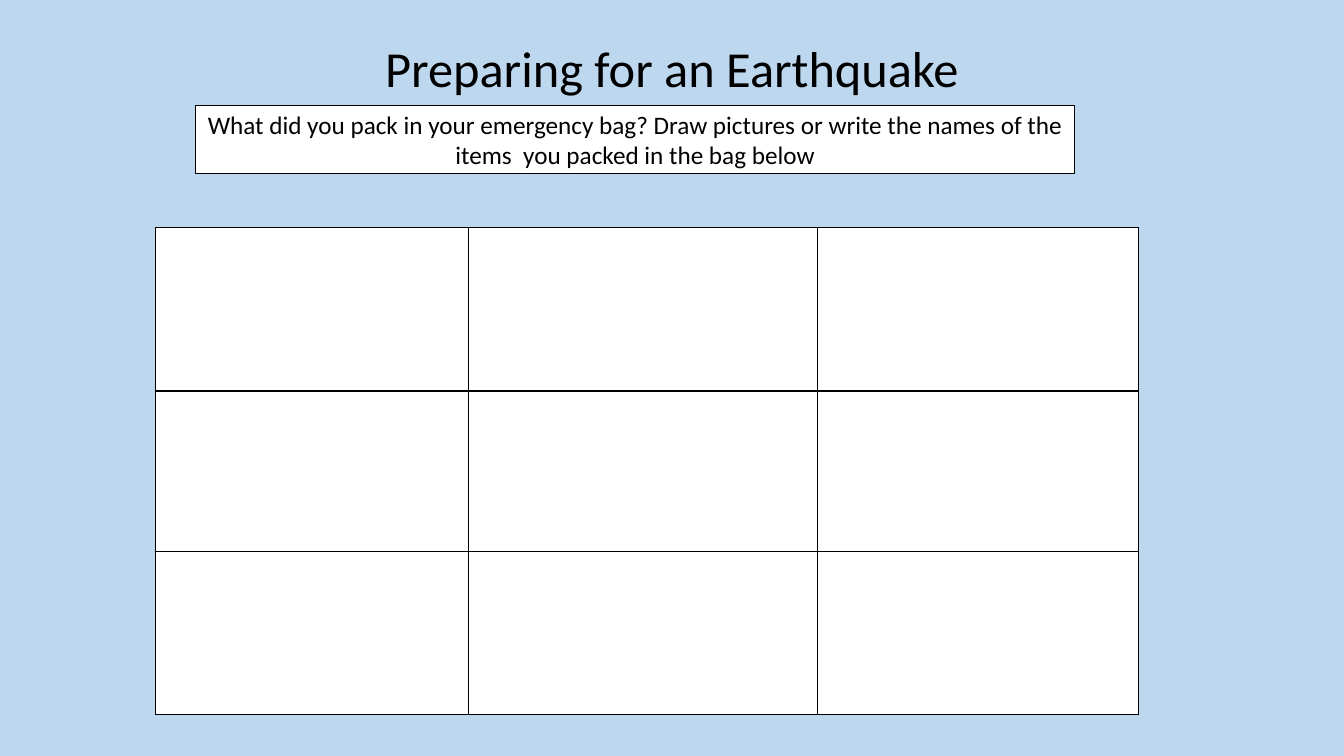
from lxml import etree
from pptx import Presentation
from pptx.dml.color import RGBColor
from pptx.enum.shapes import MSO_SHAPE
from pptx.enum.text import MSO_ANCHOR, PP_ALIGN
from pptx.oxml.ns import qn
from pptx.util import Inches, Pt

CENTER = PP_ALIGN.CENTER
MIDDLE = MSO_ANCHOR.MIDDLE
RECTANGLE = MSO_SHAPE.RECTANGLE
TITLE_ONLY = 5


def color(hex_value):
    return RGBColor.from_string(hex_value)


class Worksheet:
    """One slide together with the style shared by its elements."""
    font = "Calibri"
    ink = "000000"
    paper = "FFFFFF"
    backdrop = "BDD7EE"
    line_width = Pt(1)

    def __init__(self, deck):
        self.slide = deck.slides.add_slide(deck.slide_layouts[TITLE_ONLY])
        self.fill(self.slide.background, self.backdrop)

    def fill(self, element, hex_value):
        element.fill.solid()
        element.fill.fore_color.rgb = color(hex_value)

    def add_text(self, frame, text, size, line_spacing=None):
        frame.word_wrap = True
        frame.vertical_anchor = MIDDLE
        paragraph = frame.paragraphs[0]
        paragraph.alignment = CENTER
        paragraph.line_spacing = line_spacing
        run = paragraph.add_run()
        run.text = text
        run.font.name = self.font
        run.font.size = Pt(size)
        run.font.color.rgb = color(self.ink)

    def title(self, text, left, top, width, height):
        heading = self.slide.shapes.title
        heading.left, heading.top = Inches(left), Inches(top)
        heading.width, heading.height = Inches(width), Inches(height)
        self.add_text(heading.text_frame, text, 36, line_spacing=0.9)

    def instruction(self, text, left, top, width, height):
        box = self.slide.shapes.add_shape(
            RECTANGLE, Inches(left), Inches(top), Inches(width), Inches(height))
        box.shadow.inherit = False
        self.fill(box, self.paper)
        box.line.color.rgb = color(self.ink)
        box.line.width = self.line_width
        self.add_text(box.text_frame, text, 18)

    def border(self, cell):
        properties = cell._tc.get_or_add_tcPr()
        for side in ("a:lnL", "a:lnR", "a:lnT", "a:lnB"):
            edge = etree.SubElement(properties, qn(side), w=str(self.line_width))
            solid = etree.SubElement(edge, qn("a:solidFill"))
            etree.SubElement(solid, qn("a:srgbClr"), val=self.ink)

    def answer_grid(self, left, top, column_widths, row_heights):
        grid = self.slide.shapes.add_table(
            len(row_heights), len(column_widths), Inches(left), Inches(top),
            Inches(sum(column_widths)), Inches(sum(row_heights))).table
        grid.first_row = grid.horz_banding = False
        for column, width in zip(grid.columns, column_widths):
            column.width = Inches(width)
        for row, height in zip(grid.rows, row_heights):
            row.height = Inches(height)
        for cell in grid.iter_cells():
            self.border(cell)
            self.fill(cell, self.paper)


def main():
    deck = Presentation()
    deck.slide_width, deck.slide_height = Inches(13.33), Inches(7.5)
    sheet = Worksheet(deck)
    sheet.title("Preparing for an Earthquake", 2.17, 0.16, 8.99, 1.09)
    sheet.instruction(
        "What did you pack in your emergency bag? Draw pictures or write "
        "the names of the items  you packed in the bag below",
        1.94, 1.05, 8.72, 0.67)
    sheet.answer_grid(1.54, 2.26, (3.11, 3.46, 3.18), (1.62, 1.59, 1.62))
    deck.save("out.pptx")


if __name__ == "__main__":
    main()
